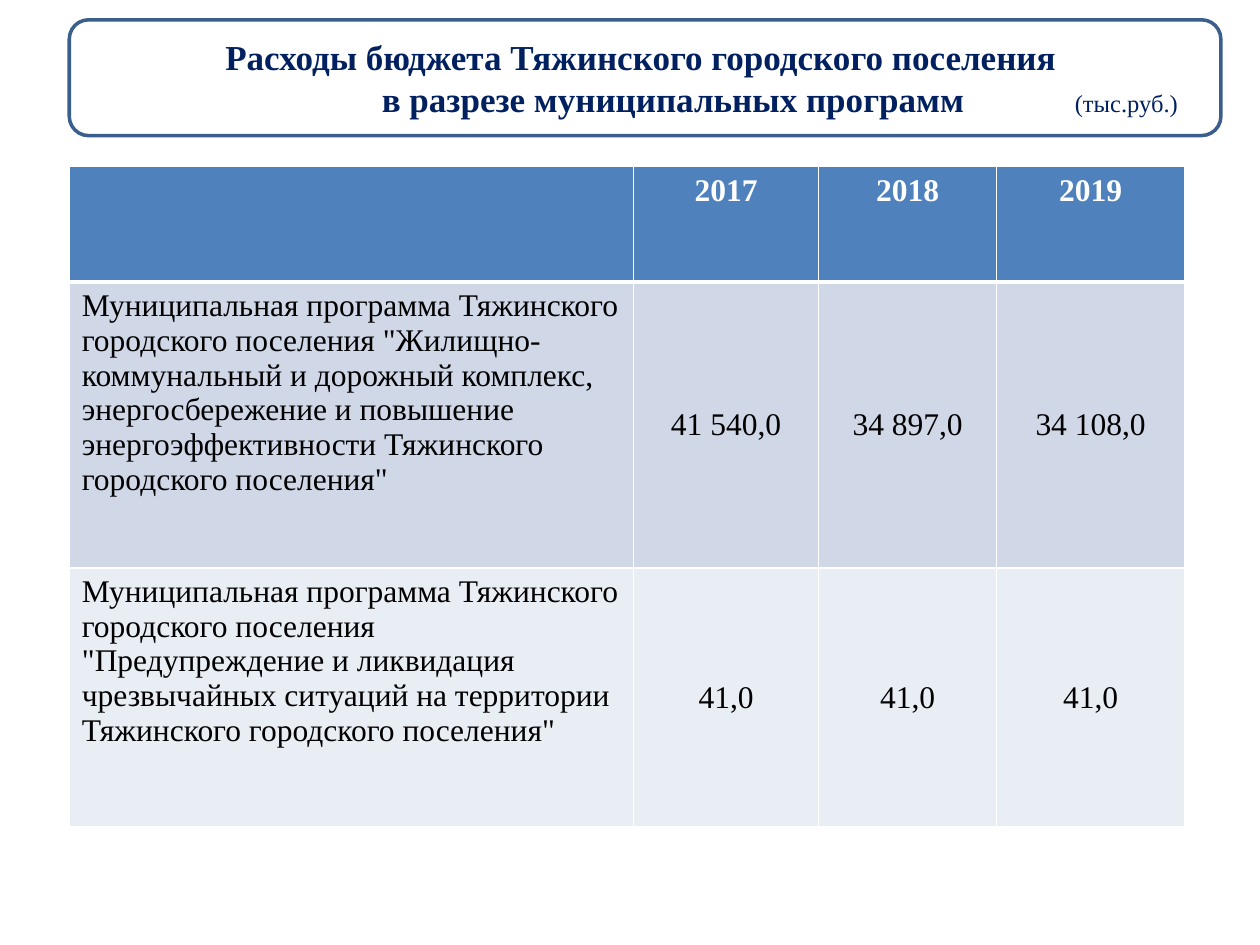
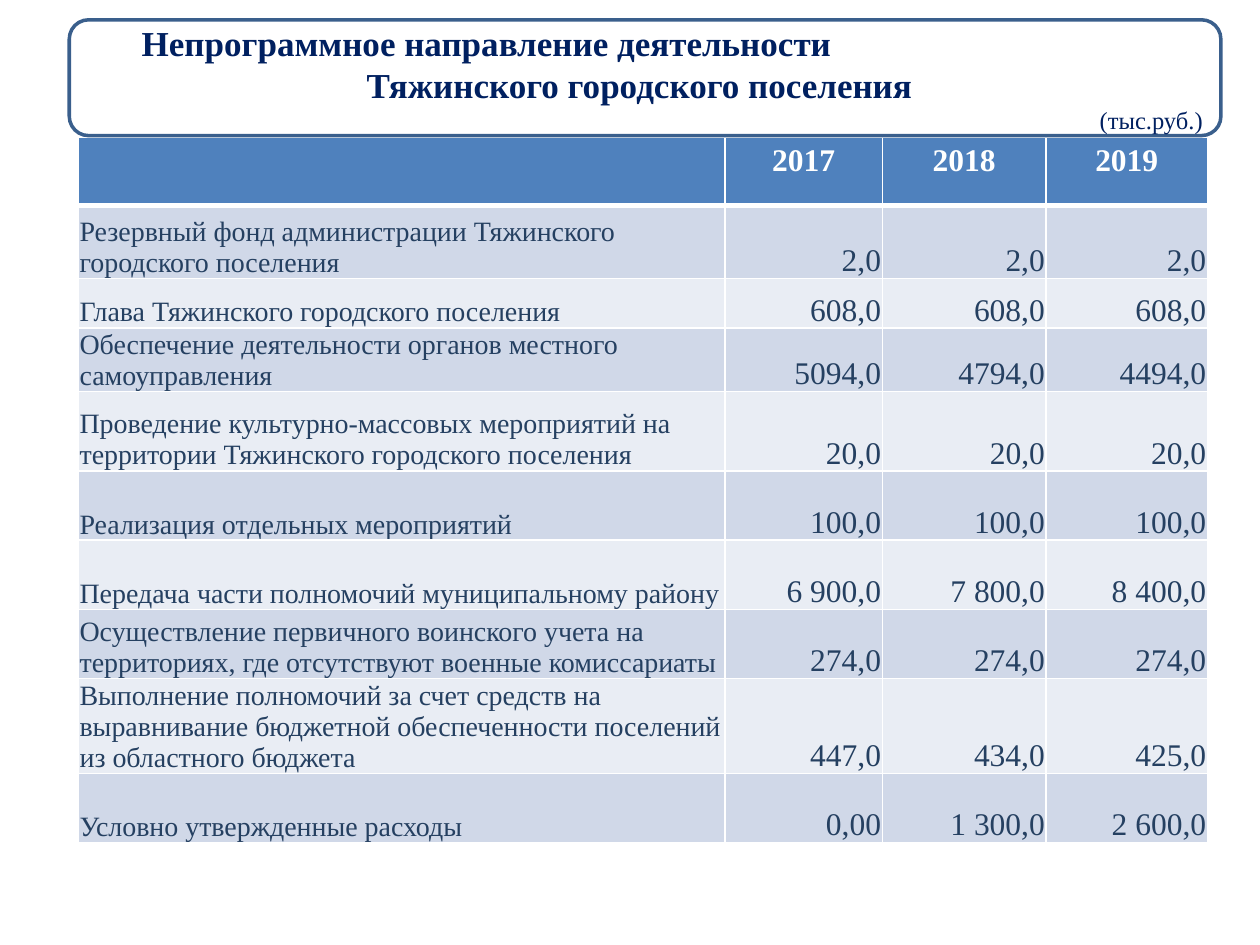
import pptx
import pptx.util
import pptx.dml.color
import pptx.enum.shapes
import pptx.enum.text
import pptx.oxml
import pptx.oxml.ns

Pt = pptx.util.Pt
RGB = pptx.dml.color.RGBColor
ALIGN = pptx.enum.text.PP_ALIGN
ANCHOR = pptx.enum.text.MSO_ANCHOR

FONT = "Times New Roman"
NAVY = RGB(0x00, 0x20, 0x60)
EDGE = RGB(0x3A, 0x5F, 0x8C)
HEAD = RGB(0x4F, 0x81, 0xBD)
BANDS = [RGB(0xD0, 0xD8, 0xE8), RGB(0xE9, 0xED, 0xF4)]
WHITE = RGB(0xFF, 0xFF, 0xFF)
BLACK = RGB(0x00, 0x00, 0x00)
SLATE = RGB(0x25, 0x40, 0x61)
NS = pptx.oxml.ns.nsdecls("a")
YEARS = ["", "2017", "2018", "2019"]

PAGES = [
    {
        "title": [
            (ALIGN.CENTER, [], [("Расходы бюджета Тяжинского городского поселения ", 20, True)]),
            (ALIGN.LEFT, [168.3, 564.3], [("\tв разрезе муниципальных программ", 20, True),
                                          ("\t(тыс.руб.)", 14, False)]),
        ],
        "left": 39.6, "top": 95.2,
        "cols": [322.4, 105.9, 101.6, 107.6],
        "rows": [65.9, 163.4, 148.2],
        "size": 18, "ink": BLACK, "align": ALIGN.CENTER,
        "anchors": [ANCHOR.TOP, ANCHOR.MIDDLE], "tight": False,
        "data": [
            ["Муниципальная программа Тяжинского городского поселения \"Жилищно-коммунальный и дорожный комплекс, энергосбережение и повышение энергоэффективности Тяжинского городского поселения\"",
             "41 540,0", "34 897,0", "34 108,0"],
            ["Муниципальная программа Тяжинского городского поселения \"Предупреждение и ликвидация чрезвычайных ситуаций на территории Тяжинского городского поселения\"",
             "41,0", "41,0", "41,0"],
        ],
    },
    {
        "title": [
            (ALIGN.LEFT, [31.1], [("\tНепрограммное направление деятельности", 20, True)]),
            (ALIGN.LEFT, [159.7], [("\tТяжинского городского поселения", 20, True)]),
            (ALIGN.RIGHT, [], [("(тыс.руб.)", 14, False)]),
        ],
        "left": 44.8, "top": 78.6,
        "cols": [369.4, 90, 93.6, 92.2],
        "rows": [38.9, 41.8, 28.1, 34.6, 45.4] + [39.6] * 5,
        "size": 16, "ink": SLATE, "align": ALIGN.RIGHT,
        "anchors": [ANCHOR.BOTTOM, ANCHOR.BOTTOM], "tight": True,
        "data": [
            ["Резервный фонд администрации Тяжинского городского поселения", "2,0", "2,0", "2,0"],
            ["Глава Тяжинского городского поселения", "608,0", "608,0", "608,0"],
            ["Обеспечение деятельности органов местного самоуправления", "5094,0", "4794,0", "4494,0"],
            ["Проведение культурно-массовых мероприятий на территории Тяжинского городского поселения", "20,0", "20,0", "20,0"],
            ["Реализация отдельных мероприятий", "100,0", "100,0", "100,0"],
            ["Передача части полномочий муниципальному району", "6 900,0", "7 800,0", "8 400,0"],
            ["Осуществление первичного воинского учета на территориях, где отсутствуют военные комиссариаты", "274,0", "274,0", "274,0"],
            ["Выполнение полномочий за счет средств на выравнивание бюджетной обеспеченности поселений из областного бюджета", "447,0", "434,0", "425,0"],
            ["Условно утвержденные расходы", "0,00", "1 300,0", "2 600,0"],
        ],
    },
]


def add_run(para, text, size, ink, bold):
    run = para.add_run()
    run.text = text
    run.font.name = FONT
    run.font.size = Pt(size)
    run.font.bold = bold
    run.font.color.rgb = ink


def add_edges(cell, row):
    props = cell._tc.get_or_add_tcPr()
    wide = {"T": 3 if row == 1 else 1, "B": 3 if row == 0 else 1}
    for side in "LRTB":
        width = Pt(wide.get(side, 1))
        props.append(pptx.oxml.parse_xml(
            f'<a:ln{side} {NS} w="{width}"><a:solidFill>'
            f'<a:srgbClr val="{WHITE}"/></a:solidFill></a:ln{side}>'))


deck = pptx.Presentation()
deck.slide_width = Pt(720)
deck.slide_height = Pt(540)

for page in PAGES:
    slide = deck.slides.add_slide(deck.slide_layouts[6])
    cols, rows = page["cols"], page["rows"]
    grid = slide.shapes.add_table(
        len(rows), len(cols), Pt(page["left"]), Pt(page["top"]),
        Pt(sum(cols)), Pt(sum(rows))).table
    for col, width in zip(grid.columns, cols):
        col.width = Pt(width)
    for row, height in zip(grid.rows, rows):
        row.height = Pt(height)

    for r, line in enumerate([YEARS] + page["data"]):
        for c, text in enumerate(line):
            cell = grid.cell(r, c)
            add_edges(cell, r)
            cell.fill.solid()
            cell.fill.fore_color.rgb = BANDS[(r - 1) % 2] if r else HEAD
            para = cell.text_frame.paragraphs[0]
            if r == 0:
                para.alignment = ALIGN.CENTER
                if text:
                    add_run(para, text, 18, WHITE, True)
                continue
            para.alignment = page["align"] if c else ALIGN.LEFT
            cell.vertical_anchor = page["anchors"][min(c, 1)]
            if page["tight"]:
                cell.margin_left = cell.margin_right = cell.margin_top = Pt(0.72)
                cell.margin_bottom = Pt(0)
            add_run(para, text, 18 if c else page["size"], page["ink"], False)

    box = slide.shapes.add_shape(
        pptx.enum.shapes.MSO_SHAPE.ROUNDED_RECTANGLE,
        Pt(39.6), Pt(11.3), Pt(658.1), Pt(66.2))
    box.shadow.inherit = False
    box.fill.solid()
    box.fill.fore_color.rgb = WHITE
    box.line.color.rgb = EDGE
    box.line.width = Pt(2)
    frame = box.text_frame
    frame.word_wrap = True
    frame.vertical_anchor = ANCHOR.MIDDLE
    for i, (align, tabs, runs) in enumerate(page["title"]):
        para = frame.add_paragraph() if i else frame.paragraphs[0]
        para.alignment = align
        if tabs:
            stops = "".join(f'<a:tab pos="{Pt(x)}" algn="l"/>' for x in tabs)
            para._p.get_or_add_pPr().append(
                pptx.oxml.parse_xml(f"<a:tabLst {NS}>{stops}</a:tabLst>"))
        for text, size, bold in runs:
            add_run(para, text, size, NAVY, bold)

deck.save("out.pptx")
